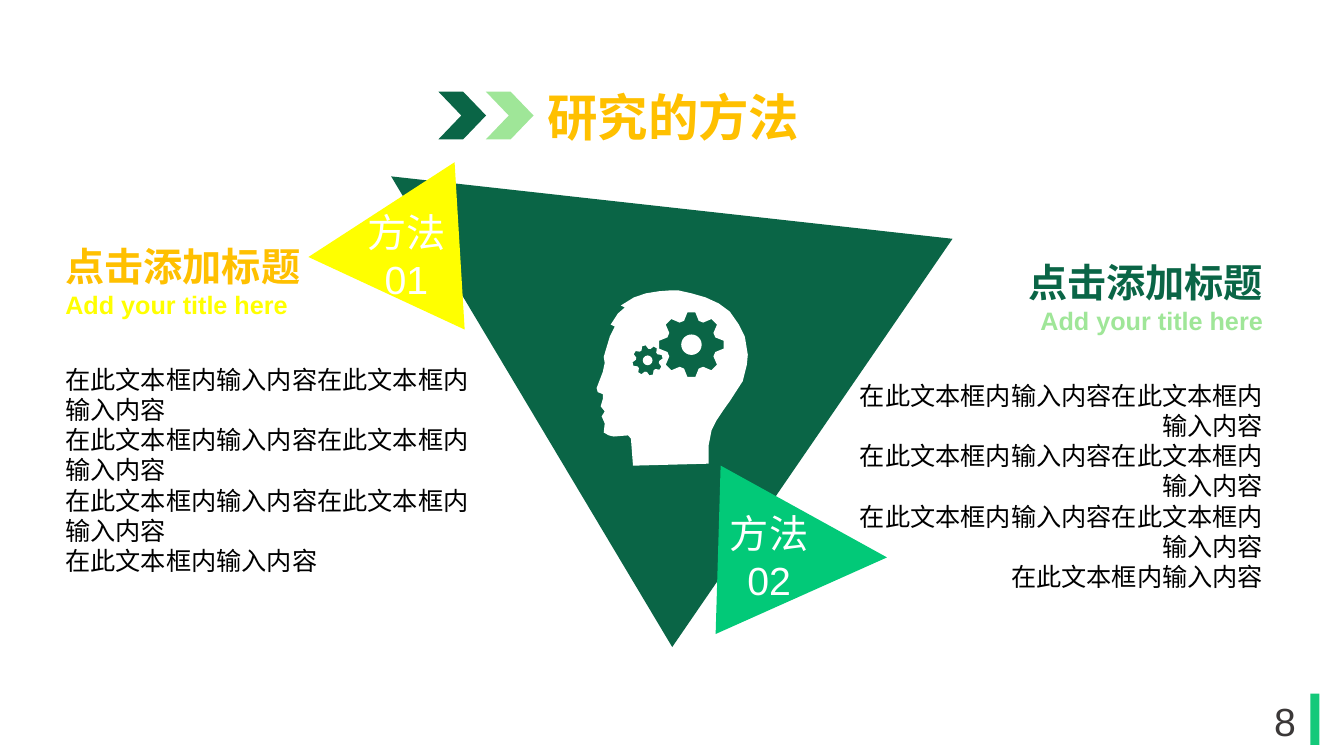
import math

import pptx
import pptx.dml.color
import pptx.enum.shapes
import pptx.enum.text
import pptx.util

Pt = pptx.util.Pt
SHAPE = pptx.enum.shapes.MSO_SHAPE
ALIGN = pptx.enum.text.PP_ALIGN
ANCHOR = pptx.enum.text.MSO_ANCHOR
AUTO_SIZE = pptx.enum.text.MSO_AUTO_SIZE

DARK_GREEN, GREEN, PALE_GREEN = "0A6546", "02C978", "9FE698"
YELLOW, GOLD, WHITE, BLACK = "FFFF00", "FFC000", "FFFFFF", "000000"

HEAD = [
    (478.8, 207.4), (470.9, 208), (461.5, 209.5), (452.9, 212.4),
    (443.5, 218.2), (446.4, 219.6), (441.4, 223.9), (436.3, 231.8),
    (439.2, 233.3), (435.6, 240.5), (431.3, 254.9), (432, 259.2),
    (430.6, 265.7), (426.2, 277.2), (427, 280.1), (430.6, 281.5),
    (430.6, 285.1), (429.1, 290.2), (432, 293.8), (429.8, 297.4),
    (432, 302.4), (431.3, 308.9), (434.9, 311), (438.5, 311.8),
    (448.6, 311), (450.7, 313.2), (452.2, 332.6), (506.2, 331.2),
    (506.2, 318.2), (508.3, 307.4), (511.9, 300.2), (517.7, 291.6),
    (521.3, 286.6), (530.6, 272.2), (533.5, 260.6), (534.2, 253.4),
    (532.1, 240.5), (527.8, 231.8), (521.3, 222.5), (513.4, 216.7),
    (504, 212.4), (493.9, 209.5), (484.6, 207.4),
]
# centre x, centre y, outer radius, angle of the first tooth, hub radius
GEARS = [(493.9, 246.2, 23.2, 0, 7.3), (462.6, 257.4, 10.8, 31, 3.5)]

BODY = ["在此文本框内输入内容在此文本框内输入内容"] * 3 + ["在此文本框内输入内容"]


def color(value):
    return pptx.dml.color.RGBColor.from_string(value)


def gear_outline(cx, cy, radius, start):
    """Eight teeth, each given by two root points and two tip points."""
    points = []
    for tooth in range(8):
        for offset, reach in ((-17, 0.77), (-7, 1), (7, 1), (17, 0.77)):
            a = math.radians(start + 45 * tooth + offset)
            points.append((cx + radius * reach * math.sin(a),
                           cy - radius * reach * math.cos(a)))
    return points


class SlideBuilder:
    font = "Arial"

    def __init__(self, slide):
        self.s = slide

    def paint(self, sp, fill):
        sp.shadow.inherit = False
        sp.fill.solid()
        sp.fill.fore_color.rgb = color(fill)
        sp.line.fill.background()

    def shape(self, kind, x, y, w, h, fill):
        sp = self.s.shapes.add_shape(kind, Pt(x), Pt(y), Pt(w), Pt(h))
        self.paint(sp, fill)
        return sp

    def outline(self, contours, fill):
        """One freeform; contours after the first are cut out of it."""
        scaled = [[(Pt(x), Pt(y)) for x, y in c] for c in contours]
        fb = self.s.shapes.build_freeform(*scaled[0][0], scale=1.0)
        fb.add_line_segments(scaled[0][1:], close=True)
        for hole in scaled[1:]:
            fb.move_to(*hole[0])
            fb.add_line_segments(hole[1:], close=True)
        self.paint(fb.convert_to_shape(), fill)

    def text(self, x, y, w, h, lines, align, anchor=ANCHOR.TOP, grow=True):
        """Each line is (text, size, colour, bold, space before)."""
        sp = self.s.shapes.add_textbox(Pt(x), Pt(y), Pt(w), Pt(h))
        tf = sp.text_frame
        tf.word_wrap = True
        tf.auto_size = AUTO_SIZE.SHAPE_TO_FIT_TEXT if grow else AUTO_SIZE.NONE
        tf.vertical_anchor = anchor
        for i, (text, size, ink, bold, before) in enumerate(lines):
            p = tf.paragraphs[0] if i == 0 else tf.add_paragraph()
            p.text = text
            p.alignment = align
            p.space_before = Pt(before)
            r = p.runs[0]
            r.font.name = self.font
            r.font.size = Pt(size)
            r.font.bold = bold
            r.font.color.rgb = color(ink)

    def method(self, corners, fill, x, y, number):
        self.outline([corners], fill)
        lines = [(t, 28, WHITE, False, 0) for t in ("方法", number)]
        self.text(x, y, 106.6, 74.9, lines, ALIGN.CENTER)

    def description(self, x, y, align, title_ink, subtitle_ink):
        lines = [("点击添加标题", 28, title_ink, True, 0),
                 ("Add your title here", 18, subtitle_ink, True, 0)]
        lines += [(t, 18, BLACK, False, 0 if i else 32)
                  for i, t in enumerate(BODY)]
        self.text(x, y, 314.6, 271.4, lines, align)


def main():
    prs = pptx.Presentation()
    prs.slide_width, prs.slide_height = Pt(960), Pt(540)
    b = SlideBuilder(prs.slides.add_slide(prs.slide_layouts[6]))

    b.shape(SHAPE.RECTANGLE, 936, 495.4, 6.5, 36.7, "14C97A")
    b.text(890.6, 500.4, 54.7, 28.8, [("8", 28, "3B3838", False, 0)],
           ALIGN.CENTER, ANCHOR.MIDDLE, grow=False)
    b.text(311, 57.6, 339.8, 51.1, [("研究的方法", 36, GOLD, True, 0)],
           ALIGN.CENTER)

    b.outline([[(680.4, 170.6), (480.2, 462.2), (279.4, 126)]], DARK_GREEN)
    b.method([(511.2, 452.9), (514.8, 332.6), (633.6, 398.2)],
             GREEN, 496.1, 360, "02")
    b.method([(220.3, 183.6), (324.7, 115.9), (331.9, 235.4)],
             YELLOW, 236.9, 145.4, "01")

    for i, fill in enumerate((DARK_GREEN, PALE_GREEN)):
        chevron = b.shape(SHAPE.CHEVRON, 313.2 + 33.9 * i, 65.5, 34, 34, fill)
        chevron.adjustments[0] = 0.48

    b.outline([HEAD] + [gear_outline(*gear[:4]) for gear in GEARS], WHITE)
    for cx, cy, _, _, hub in GEARS:
        b.shape(SHAPE.OVAL, cx - hub, cy - hub, 2 * hub, 2 * hub, WHITE)

    b.description(39.6, 169.2, ALIGN.LEFT, GOLD, YELLOW)
    b.description(594.7, 180.7, ALIGN.RIGHT, DARK_GREEN, PALE_GREEN)

    prs.save("out.pptx")


if __name__ == "__main__":
    main()
